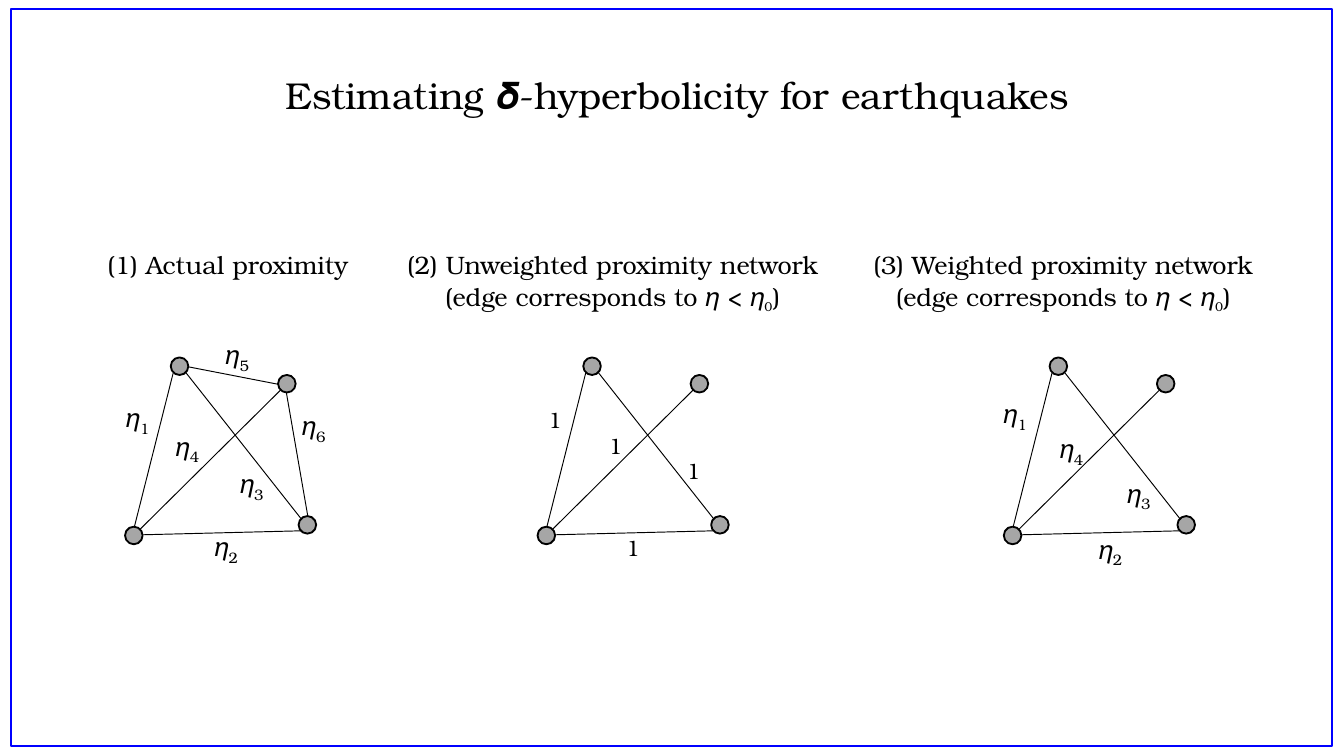
import pptx
import pptx.dml.color
import pptx.enum.shapes
import pptx.enum.text
import pptx.oxml.ns
import pptx.util
from lxml import etree

Pt = pptx.util.Pt
Align = pptx.enum.text.PP_ALIGN
Shape = pptx.enum.shapes.MSO_SHAPE

BLACK = pptx.dml.color.RGBColor(0, 0, 0)
BLUE = pptx.dml.color.RGBColor(0, 0, 255)
GRAY = pptx.dml.color.RGBColor(166, 166, 166)

NETWORK_TOP = 191.5
NODE_SIZE = 9.4
NODES = [(24.5, 0), (0, 90.7), (82, 9.4), (93, 85)]
EDGES = {
    1: ((5, 90.7), (25.9, 7.9)),
    2: ((9.4, 95), (94.3, 92.9)),
    3: ((94.3, 86.4), (32.4, 7.9)),
    4: ((7.9, 92.2), (83.5, 17.3)),
    5: ((33.8, 5), (82.1, 14.4)),
    6: ((97.9, 85), (86.4, 18.7)),
}
CONDITION = [("(edge corresponds to ", {}), ("𝜂", {"size": 14}), (" < ", {}),
             ("𝜂", {"size": 14}), ("0", {"size": 12, "baseline": -25}), (")", {})]
NETWORKS = [
    {"left": 67, "title": "(1) Actual proximity", "title_box": (50.4, 130.3, 145.4, 23.8),
     "weighted": True, "condition": False,
     "labels": {1: (-6.5, 20.2), 2: (41, 89.3), 3: (54.7, 55.4),
                4: (20.2, 35.3), 5: (46.8, -13.7), 6: (87.8, 24.5)}},
    {"left": 288, "title": "(2) Unweighted proximity network",
     "title_box": (211, 130.3, 239.8, 40.3), "weighted": False, "condition": True,
     "labels": {1: (-1.4, 22.3), 2: (40.3, 91.4), 3: (72.7, 49.7), 4: (31, 36.7)}},
    {"left": 537.8, "title": "(3) Weighted proximity network",
     "title_box": (460.8, 130.3, 222.5, 40.3), "weighted": True, "condition": True,
     "labels": {1: (-7.2, 18), 2: (43.9, 90.7), 3: (59, 60.5), 4: (23, 36.7)}},
]


def add_run(paragraph, text, size=13.5, baseline=0, font="TeX Gyre Bonum", color=BLACK):
    """Append one formatted run, with the baseline shift in percent."""
    run = paragraph.add_run()
    run.text = text
    run.font.size = Pt(size)
    run.font.name = font
    run.font.color.rgb = color
    if baseline:
        run.font._element.set("baseline", str(baseline * 1000))


class Canvas:
    """Draw styled elements on one slide, measured in points."""

    def __init__(self, slide, node_line=1, edge_line=0.5):
        self.slide = slide
        self.node_line = node_line
        self.edge_line = edge_line

    def shape(self, kind, box, line, fill=None):
        shape = self.slide.shapes.add_shape(kind, *map(Pt, box))
        shape.shadow.inherit = False
        shape.line.color.rgb = line
        shape.line.width = Pt(self.node_line)
        if fill is None:
            shape.fill.background()
        else:
            shape.fill.solid()
            shape.fill.fore_color.rgb = fill

    def edge(self, start, end):
        connector = self.slide.shapes.add_connector(
            pptx.enum.shapes.MSO_CONNECTOR.STRAIGHT, *map(Pt, start + end))
        connector.line.color.rgb = BLACK
        connector.line.width = Pt(self.edge_line)
        etree.SubElement(connector._element.spPr, pptx.oxml.ns.qn("a:effectLst"))

    def text(self, box, lines, wrap=False):
        frame = self.slide.shapes.add_textbox(*map(Pt, box)).text_frame
        frame.word_wrap = wrap
        frame.auto_size = pptx.enum.text.MSO_AUTO_SIZE.SHAPE_TO_FIT_TEXT
        for index, (alignment, runs) in enumerate(lines):
            paragraph = frame.add_paragraph() if index else frame.paragraphs[0]
            paragraph.alignment = alignment
            for text, style in runs:
                add_run(paragraph, text, **style)

    def network(self, left, title, title_box, weighted, condition, labels):
        def place(point):
            return left + point[0], NETWORK_TOP + point[1]

        lines = [(Align.LEFT, [(title, {})])]
        if condition:
            lines.append((Align.CENTER, CONDITION))
        self.text(title_box, lines)
        for node in NODES:
            self.shape(Shape.OVAL, place(node) + (NODE_SIZE, NODE_SIZE), BLACK, GRAY)
        for number, position in labels.items():
            start, end = EDGES[number]
            self.edge(place(start), place(end))
            if weighted:
                size = (28.1, 24.5)
                runs = [("𝜂", {"size": 14}), (str(number), {"size": 14, "baseline": -25})]
            else:
                size = (22.3, 21.6)
                runs = [("1", {"size": 12})]
            self.text(place(position) + size, [(Align.LEFT, runs)])


def main():
    presentation = pptx.Presentation()
    presentation.slide_width = Pt(720)
    presentation.slide_height = Pt(405)
    canvas = Canvas(presentation.slides.add_slide(presentation.slide_layouts[6]))
    canvas.shape(Shape.RECTANGLE, (5.8, 5, 708, 394.6), BLUE)
    title = " Estimating 𝜹-hyperbolicity for earthquakes"
    canvas.text((5.8, 35.3, 708, 31.7), [(Align.CENTER, [(title, {"size": 20})])], wrap=True)
    for network in NETWORKS:
        canvas.network(**network)
    presentation.save("out.pptx")


if __name__ == "__main__":
    main()
